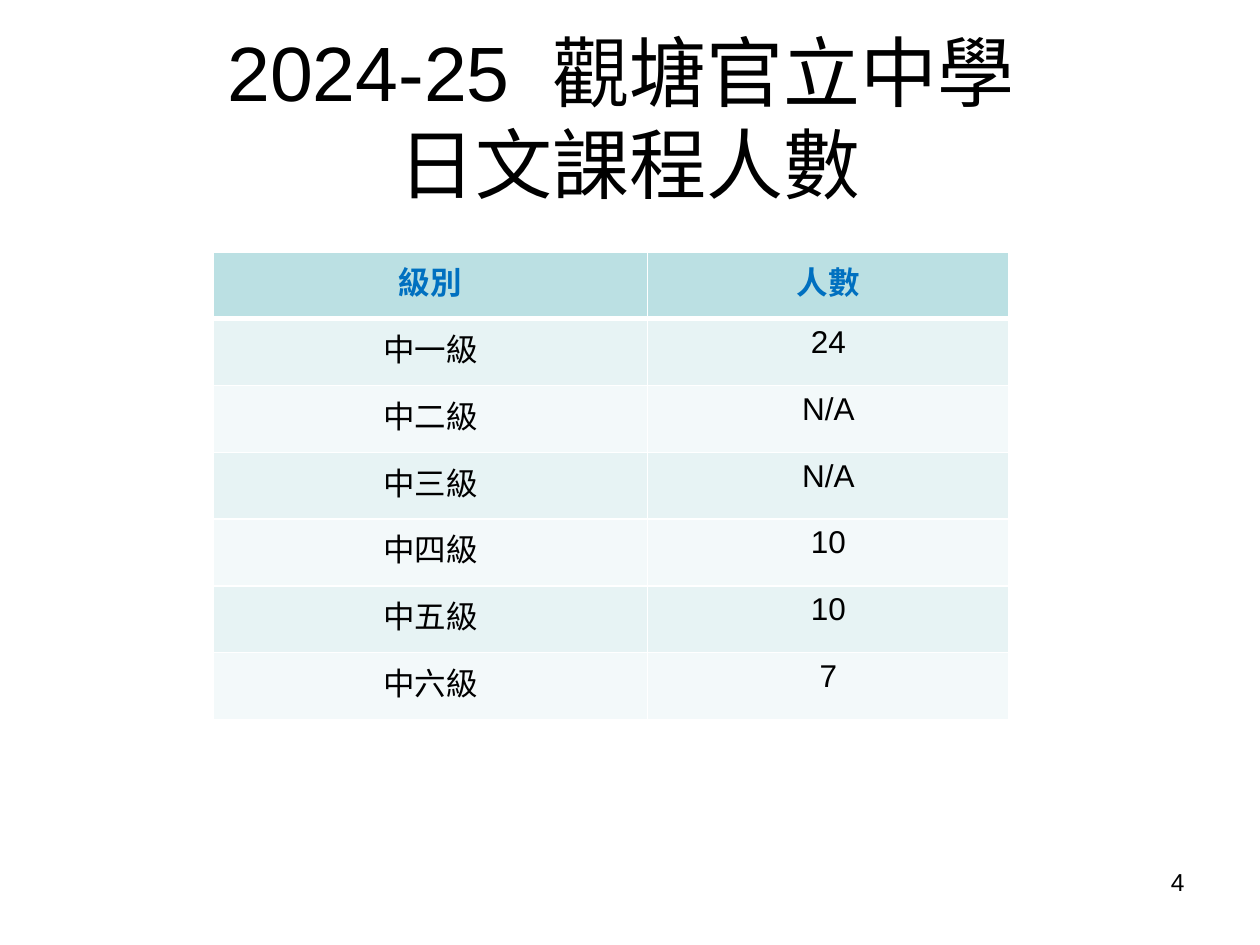
from dataclasses import dataclass

from lxml import etree
from pptx import Presentation
from pptx.dml.color import RGBColor
from pptx.enum.text import MSO_ANCHOR, PP_ALIGN
from pptx.oxml.ns import qn
from pptx.util import Inches, Pt

CENTER, RIGHT = PP_ALIGN.CENTER, PP_ALIGN.RIGHT
TOP, MIDDLE = MSO_ANCHOR.TOP, MSO_ANCHOR.MIDDLE


@dataclass(frozen=True)
class Theme:
    font: str = "Arial"
    title_size: int = 44
    table_size: int = 18
    number_size: int = 14
    text: str = "000000"
    header_text: str = "0070C0"
    header_fill: str = "BBE0E3"
    row_fills: tuple = ("E7F3F4", "F3F9FA")
    border: str = "FFFFFF"


THEME = Theme()

ENROLMENT = [
    ("級別", "人數"),
    ("中一級", "24"),
    ("中二級", "N/A"),
    ("中三級", "N/A"),
    ("中四級", "10"),
    ("中五級", "10"),
    ("中六級", "7"),
]
COLUMN_WIDTHS = (3.45, 2.87)
ROW_HEIGHT = 0.53


def write_text(text_frame, text, size, alignment, color=THEME.text, bold=False):
    paragraph = text_frame.paragraphs[0]
    paragraph.text = text
    paragraph.alignment = alignment
    font = paragraph.font
    font.name = THEME.font
    font.size = Pt(size)
    font.bold = bold
    font.color.rgb = RGBColor.from_string(color)


def add_text(slide, text, box, size, alignment, anchor):
    shape = slide.shapes.add_textbox(*map(Inches, box))
    shape.text_frame.word_wrap = True
    shape.text_frame.vertical_anchor = anchor
    write_text(shape.text_frame, text, size, alignment)


def add_border(cell, side, width):
    properties = cell._tc.get_or_add_tcPr()
    line = etree.SubElement(properties, qn(f"a:ln{side}"), w=str(Pt(width)))
    fill = etree.SubElement(line, qn("a:solidFill"))
    etree.SubElement(fill, qn("a:srgbClr"), val=THEME.border)


def style_cell(cell, text, row):
    is_header = row == 0
    cell.margin_left = cell.margin_right = Inches(0.07)
    cell.margin_top = cell.margin_bottom = Inches(0.05)
    # A thick rule separates the header from the first row
    thick_sides = {0: "B", 1: "T"}
    for side in "LRTB":
        add_border(cell, side, 3 if thick_sides.get(row) == side else 1)
    fill = THEME.header_fill if is_header else THEME.row_fills[(row - 1) % 2]
    cell.fill.solid()
    cell.fill.fore_color.rgb = RGBColor.from_string(fill)
    color = THEME.header_text if is_header else THEME.text
    write_text(cell.text_frame, text, THEME.table_size, CENTER, color, is_header)


def add_enrolment_table(slide, left, top):
    table = slide.shapes.add_table(
        len(ENROLMENT), len(COLUMN_WIDTHS), Inches(left), Inches(top),
        Inches(sum(COLUMN_WIDTHS)), Inches(ROW_HEIGHT * len(ENROLMENT)),
    ).table
    for column, width in zip(table.columns, COLUMN_WIDTHS):
        column.width = Inches(width)
    for row, values in enumerate(ENROLMENT):
        table.rows[row].height = Inches(ROW_HEIGHT)
        for column, text in enumerate(values):
            style_cell(table.cell(row, column), text, row)


def main():
    presentation = Presentation()
    presentation.slide_width = Inches(10)
    presentation.slide_height = Inches(7.5)
    slide = presentation.slides.add_slide(presentation.slide_layouts[6])

    # Title
    add_text(slide, "2024-25  觀塘官立中學 \v日文課程人數", (0.5, 0.3, 9, 1.25),
             THEME.title_size, CENTER, MIDDLE)
    # Enrolment by form
    add_enrolment_table(slide, 1.69, 2)
    # Page number
    add_text(slide, "4", (7.17, 6.83, 2.33, 0.52), THEME.number_size, RIGHT, TOP)

    presentation.save("out.pptx")


if __name__ == "__main__":
    main()
